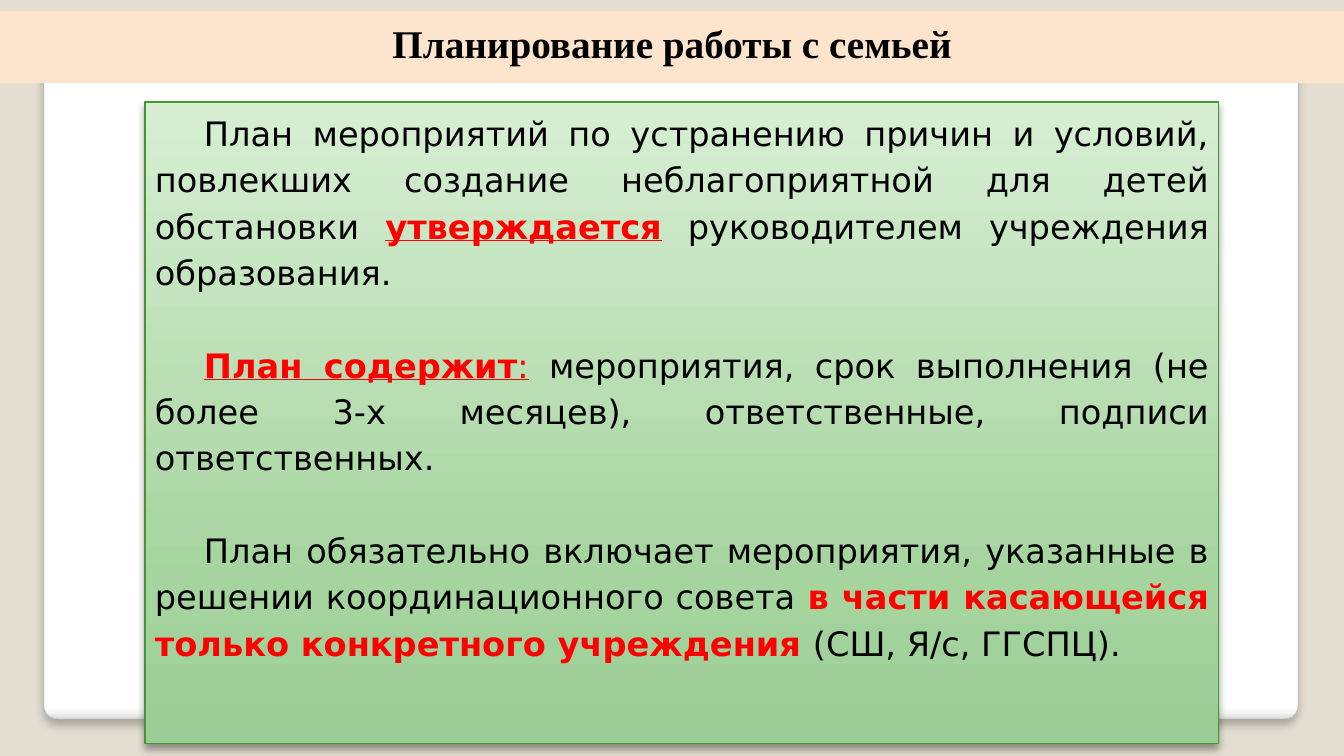
"""Build the slide on planning work with a family."""
import lxml.etree
import pptx
import pptx.dml.color
import pptx.enum.shapes
import pptx.enum.text
import pptx.oxml.ns
import pptx.util

SCALE = 914400 / 100.8
COLOR = {
    "page": "E3DED1", "band": "FDE5CD", "ink": "000000", "red": "FF0000",
    "white": "FFFFFF", "pale": "F7F7F7", "gray": "DADADA", "edge": "A4A4A4",
    "light": "D7EED3", "mid": "A5D49E", "deep": "9DCD96", "green": "439631",
}
ALIGN = pptx.enum.text.PP_ALIGN
ANCHOR = pptx.enum.text.MSO_ANCHOR
FORM = pptx.enum.shapes.MSO_SHAPE
PLAIN = {"name": "DejaVu Sans", "size": pptx.util.Pt(24), "color": "ink",
         "bold": False, "underline": False}
BOLD = {**PLAIN, "color": "red", "bold": True}
LINED = {**BOLD, "underline": True}
HEAD = {"name": "Times New Roman", "size": pptx.util.Pt(28), "color": "ink",
        "bold": True}
PLAN = [
    [("План мероприятий по устранению причин и условий, повлекших создание "
      "неблагоприятной для детей обстановки ", PLAIN),
     ("утверждается", LINED),
     (" руководителем учреждения образования.", PLAIN)],
    [("План содержит", LINED),
     (":", {**LINED, "bold": False}),
     (" мероприятия, срок выполнения (не более 3-х месяцев), ответственные, "
      "подписи ответственных.", PLAIN)],
    [("План обязательно включает мероприятия, указанные в решении "
      "координационного совета ", PLAIN),
     ("в части касающейся только конкретного учреждения ", BOLD),
     ("(СШ, Я/с, ГГСПЦ).", PLAIN)],
]


def px(num):
    """Turn pixels into EMU."""
    return pptx.util.Emu(round(num * SCALE))


def rgb(key):
    """Look up a colour by its key."""
    return pptx.dml.color.RGBColor.from_string(COLOR[key])


def node(base, tag, **vals):
    """Add a drawing element under a base element."""
    item = lxml.etree.SubElement(base, pptx.oxml.ns.qn(tag))
    for key, val in vals.items():
        item.set(key, str(val))
    return item


def style(item, vals):
    """Set attributes from a dict, with colour given by key."""
    for key, val in vals.items():
        if key == "color":
            item.color.rgb = rgb(val)
        else:
            setattr(item, key, val)


def blend(shape, stops):
    """Fill a shape with a gradient that runs from top to bottom."""
    shape.fill.gradient()
    shape.fill.gradient_angle = 270
    group = shape.element.spPr.find(".//" + pptx.oxml.ns.qn("a:gsLst"))
    for old in list(group):
        group.remove(old)
    for place, key in stops:
        stop = node(group, "a:gs", pos=place * 1000)
        node(stop, "a:srgbClr", val=COLOR[key])


def shade(shape, blur, dist, alpha):
    """Cast a soft shadow straight down."""
    shape.shadow.inherit = False
    base = shape.element.spPr.find(pptx.oxml.ns.qn("a:effectLst"))
    cast = node(base, "a:outerShdw", blurRad=pptx.util.Pt(blur),
                dist=pptx.util.Pt(dist), dir=5400000, algn="t",
                rotWithShape=0)
    tint = node(cast, "a:srgbClr", val=COLOR["ink"])
    node(tint, "a:alpha", val=alpha * 1000)


def panel(slide, form, box, stops, line, width, cast):
    """Add a gradient panel with a thin line and a shadow."""
    shape = slide.shapes.add_shape(form, *map(px, box))
    blend(shape, stops)
    style(shape.line, {"width": pptx.util.Pt(width), "color": line})
    shade(shape, *cast)
    return shape


def write(para, parts, vals):
    """Write styled runs into a paragraph."""
    style(para, vals)
    for text, face in parts:
        run = para.add_run()
        run.text = text
        style(run.font, face)


def title(slide, text):
    """Turn the title placeholder into a full-width band."""
    band = slide.shapes.title
    style(band, {"left": px(0), "top": px(11),
                 "width": px(1344), "height": px(72)})
    band.fill.solid()
    band.fill.fore_color.rgb = rgb("band")
    style(band.text_frame, {
        "vertical_anchor": ANCHOR.MIDDLE, "word_wrap": True,
        "auto_size": pptx.enum.text.MSO_AUTO_SIZE.NONE})
    write(band.text_frame.paragraphs[0], [(text, HEAD)],
          {"alignment": ALIGN.CENTER, "line_spacing": 0.8})
    slide.shapes.element.append(band.element)


def body(shape, paras):
    """Fill a panel with justified, indented paragraphs."""
    frame = shape.text_frame
    style(frame, {"vertical_anchor": ANCHOR.TOP, "word_wrap": True})
    for num, parts in enumerate(paras):
        para = frame.add_paragraph() if num else frame.paragraphs[0]
        write(para, parts, {"alignment": ALIGN.JUSTIFY, "line_spacing": 1.15,
                            "space_after": pptx.util.Pt(33)})
        para._p.get_or_add_pPr().set("indent", str(px(49)))


def main():
    """Build and save the deck."""
    deck = pptx.Presentation()
    style(deck, {"slide_width": px(1344), "slide_height": px(756)})
    slide = deck.slides.add_slide(deck.slide_layouts[5])
    slide.background.fill.solid()
    slide.background.fill.fore_color.rgb = rgb("page")
    sheet = panel(slide, FORM.ROUNDED_RECTANGLE, (44, 36, 1254, 683),
                  [(0, "white"), (98, "white"), (99, "pale"), (100, "gray")],
                  "edge", 0.16, (6, 4, 25))
    sheet.adjustments[0] = 0.02
    title(slide, "Планирование работы с семьей")
    card = panel(slide, FORM.RECTANGLE, (145, 102, 1074, 642),
                 [(0, "light"), (75, "mid"), (100, "deep")],
                 "green", 0.75, (5.2, 3, 40))
    body(card, PLAN)
    deck.save("out.pptx")


if __name__ == "__main__":
    main()
